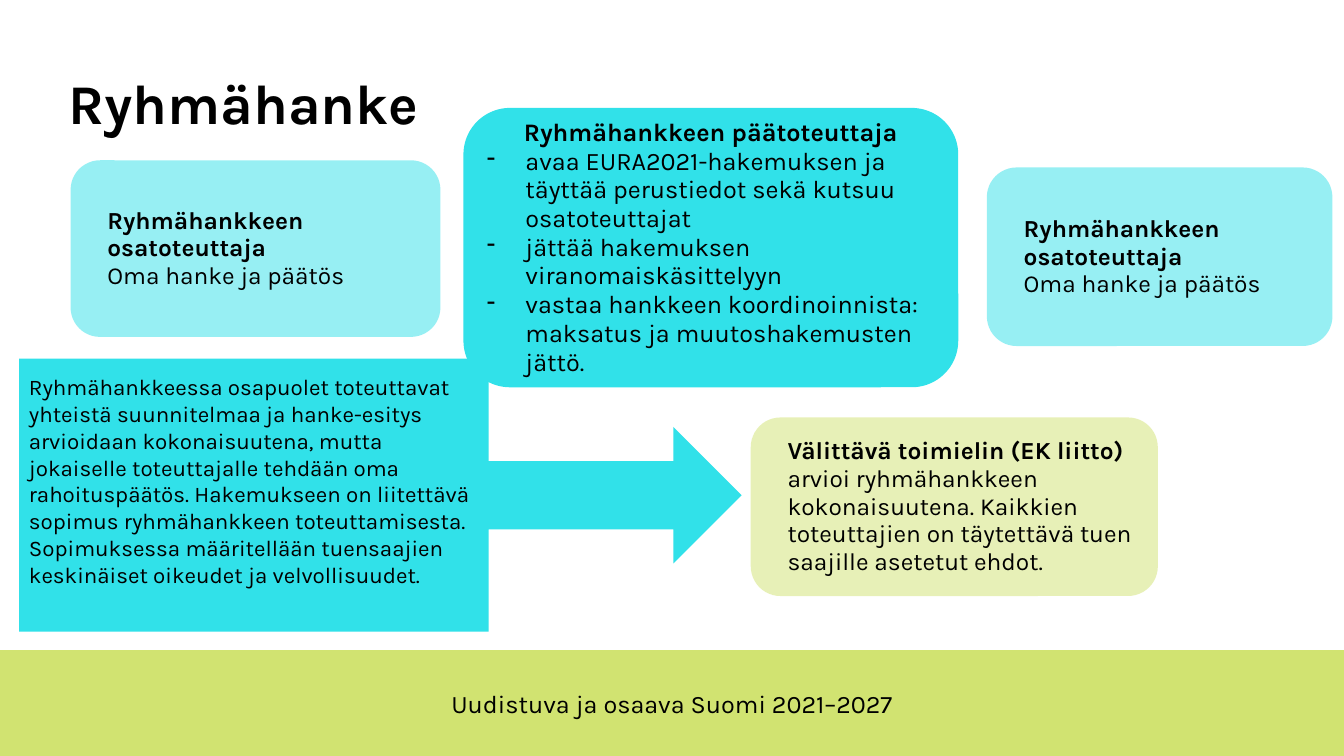
from lxml import etree
from pptx import Presentation
from pptx.dml.color import RGBColor
from pptx.enum.shapes import MSO_SHAPE
from pptx.enum.text import MSO_ANCHOR, MSO_AUTO_SIZE, PP_ALIGN
from pptx.oxml.ns import qn
from pptx.util import Cm, Pt

RECT = MSO_SHAPE.RECTANGLE
ROUND = MSO_SHAPE.ROUNDED_RECTANGLE
CALLOUT = MSO_SHAPE.RIGHT_ARROW_CALLOUT
MIDDLE, BOTTOM = MSO_ANCHOR.MIDDLE, MSO_ANCHOR.BOTTOM
LEFT, CENTER = PP_ALIGN.LEFT, PP_ALIGN.CENTER
NO_FIT = MSO_AUTO_SIZE.NONE
BLACK, CYAN, LIME = "000000", "31E1E9", "D1E371"
PLAIN = (0.25, 0.13, 0.25, 0.13)
CARD = (0.71, 0.13, 0.25, 0.13)
ZERO = (0, 0, 0, 0)


def color(code):
    """Turn a hex string into a colour."""
    return RGBColor.from_string(code)


def apply(target, values):
    """Set each named value on the target."""
    for name, value in values.items():
        setattr(target, name, value)


class Deck:
    """Hold the style and the current slide."""

    def __init__(self):
        """Open a wide deck with one title-only slide."""
        self.font = "Karla"
        self.prs = Presentation()
        apply(self.prs, {"slide_width": Cm(33.87), "slide_height": Cm(19.05)})
        self.slide = self.prs.slides.add_slide(self.prs.slide_layouts[5])

    def set_text(self, shape, lines, size, inset=PLAIN, anchor=MIDDLE, space=0.95):
        """Fill a shape with (text, bold, align, dash) lines."""
        frame = shape.text_frame
        sides = ("margin_left", "margin_top", "margin_right", "margin_bottom")
        apply(frame, {"word_wrap": True, "auto_size": NO_FIT,
                      "vertical_anchor": anchor})
        apply(frame, {side: Cm(gap) for side, gap in zip(sides, inset)})
        for index, (text, bold, align, dash) in enumerate(lines):
            para = frame.add_paragraph() if index else frame.paragraphs[0]
            apply(para, {"text": text, "alignment": align, "line_spacing": space})
            if dash:
                props = para._p.get_or_add_pPr()
                for name, value in {"marL": Cm(0.97), "indent": Cm(-0.97)}.items():
                    props.set(name, str(value))
                etree.SubElement(props, qn("a:buChar")).set("char", "-")
            font = para.runs[0].font
            apply(font, {"name": self.font, "size": Pt(size), "bold": bold})
            font.color.rgb = color(BLACK)

    def title(self, text, box):
        """Place and format the title."""
        shape = self.slide.shapes.title
        apply(shape, dict(zip(("left", "top", "width", "height"), map(Cm, box))))
        self.set_text(shape, [(text, True, LEFT, False)], 40, ZERO, BOTTOM, 0.9)

    def shape(self, kind, box, fill, alpha=100):
        """Draw a filled shape without outline."""
        shape = self.slide.shapes.add_shape(kind, *map(Cm, box))
        shape.shadow.inherit = False
        shape.line.fill.background()
        shape.fill.solid()
        shape.fill.fore_color.rgb = color(fill)
        if alpha < 100:
            tone = shape._element.spPr.find(".//" + qn("a:srgbClr"))
            etree.SubElement(tone, qn("a:alpha")).set("val", str(alpha * 1000))
        return shape

    def label(self, text, box, size):
        """Add a centred line of text."""
        shape = self.slide.shapes.add_textbox(*map(Cm, box))
        self.set_text(shape, [(text, False, CENTER, False)], size, ZERO, space=1)

    def card(self, head, body, box, fill):
        """Draw a pale card with a bold heading."""
        lines = [(head, True, LEFT, False), (body, False, LEFT, False)]
        self.set_text(self.shape(ROUND, box, fill, 50), lines, 17.5, CARD)

    def tasks(self, head, items, box):
        """Draw a box with a heading and dashed items."""
        lines = [(head, True, CENTER, False)]
        lines += [(item, False, LEFT, True) for item in items]
        self.set_text(self.shape(ROUND, box, CYAN), lines, 18)

    def callout(self, text, box):
        """Draw an arrow callout with text."""
        self.set_text(self.shape(CALLOUT, box, CYAN), [(text, False, LEFT, False)],
                      16, (0.25, 0.13, 0.25, 0.87), space=1)


def main():
    """Build the slide and save it."""
    deck = Deck()
    deck.shape(RECT, (0, 16.38, 33.87, 2.67), LIME)
    deck.label("Uudistuva ja osaava Suomi 2021–2027", (8.26, 17.35, 17.35, 0.76), 18)
    deck.title("Ryhmähanke", (1.73, 1.7, 29.62, 1.75))
    deck.tasks("Ryhmähankkeen päätoteuttaja", [
        "avaa EURA2021-hakemuksen ja täyttää perustiedot sekä kutsuu osatoteuttajat",
        "jättää hakemuksen viranomaiskäsittelyyn",
        "vastaa hankkeen koordinoinnista: maksatus ja muutoshakemusten jättö.",
    ], (11.68, 2.72, 12.47, 7.04))
    for box in ((24.87, 4.22, 8.71, 4.5), (1.78, 4.04, 9.32, 4.45)):
        deck.card("Ryhmähankkeen osatoteuttaja", "Oma hanke ja päätös", box, CYAN)
    deck.card("Välittävä toimielin (EK liitto)",
              "arvioi ryhmähankkeen kokonaisuutena. Kaikkien toteuttajien on "
              "täytettävä tuen saajille asetetut ehdot.",
              (18.92, 10.52, 10.26, 4.5), LIME)
    deck.callout("Ryhmähankkeessa osapuolet toteuttavat yhteistä suunnitelmaa ja "
                 "hanke-esitys arvioidaan kokonaisuutena, mutta jokaiselle "
                 "toteuttajalle tehdään oma rahoituspäätös. Hakemukseen on "
                 "liitettävä sopimus ryhmähankkeen toteuttamisesta. Sopimuksessa "
                 "määritellään tuensaajien keskinäiset oikeudet ja velvollisuudet.",
                 (0.48, 9.04, 18.21, 6.88))
    deck.prs.save("out.pptx")


if __name__ == "__main__":
    main()
